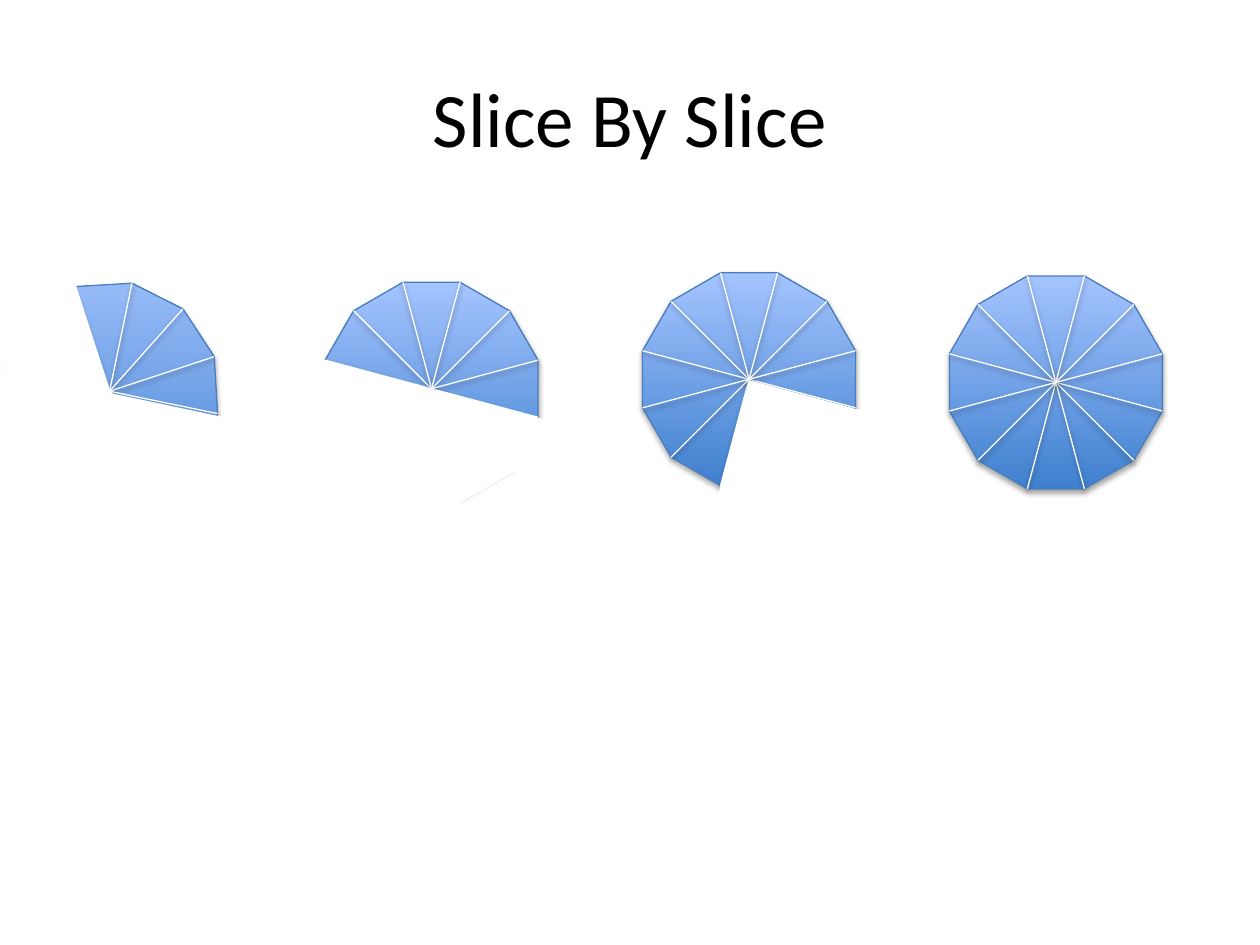
import math

import pptx
import pptx.dml.color
import pptx.enum.shapes
import pptx.enum.text
import pptx.oxml.ns
import pptx.util
from lxml import etree

COLORS = {
    "dark": "3F80CE",
    "light": "A4C4FF",
    "edge": "4B7EBC",
    "white": "FFFFFF",
    "black": "000000",
}
COLUMNS, ROWS = 100, 75
SHAPE = pptx.enum.shapes.MSO_SHAPE
SIZE = 16.9
SPOKES = 6


def color(name):
    return pptx.dml.color.RGBColor.from_string(COLORS[name])


class Page:
    font = "Calibri"
    line_width = pptx.util.Pt(0.75)

    def __init__(self, deck):
        self.slide = deck.slides.add_slide(deck.slide_layouts[5])
        self.column = deck.slide_width / COLUMNS
        self.row = deck.slide_height / ROWS

    def place(self, left, top, width, height):
        return (round(left * self.column), round(top * self.row),
                round(width * self.column), round(height * self.row))

    def title(self, text, *area):
        box = self.slide.shapes.title
        box.left, box.top, box.width, box.height = self.place(*area)
        box.text_frame.text = text
        box.text_frame.vertical_anchor = pptx.enum.text.MSO_ANCHOR.MIDDLE
        para = box.text_frame.paragraphs[0]
        para.alignment = pptx.enum.text.PP_ALIGN.CENTER
        para.font.name = self.font
        para.font.size = pptx.util.Pt(44)
        para.font.color.rgb = color("black")

    def outline(self, item, name):
        item.line.color.rgb = color(name)
        item.line.width = self.line_width

    def shadow(self, item, opacity, distance):
        qn = pptx.oxml.ns.qn
        properties = item._element.spPr
        effects = properties.find(qn("a:effectLst"))
        if effects is None:
            effects = etree.SubElement(properties, qn("a:effectLst"))
        outer = etree.SubElement(
            effects, qn("a:outerShdw"), blurRad=str(pptx.util.Pt(3.1)),
            dist=str(pptx.util.Pt(distance)), dir="5400000", rotWithShape="0")
        shade = etree.SubElement(outer, qn("a:srgbClr"), val=COLORS["black"])
        etree.SubElement(shade, qn("a:alpha"), val=str(opacity * 1000))

    def disc(self, group, center_x, center_y, turn):
        area = self.place(center_x - SIZE / 2, center_y - SIZE / 2, SIZE, SIZE)
        disc = group.shapes.add_shape(SHAPE.DODECAGON, *area)
        disc.rotation = turn
        disc.fill.gradient()
        disc.fill.gradient_angle = 90
        for stop, name in zip(disc.fill.gradient_stops, ("dark", "light")):
            stop.color.rgb = color(name)
        gradient = disc._element.spPr.find(pptx.oxml.ns.qn("a:gradFill"))
        gradient.set("rotWithShape", "0")
        self.outline(disc, "edge")
        disc.shadow.inherit = False
        self.shadow(disc, 35, 1.8)

    def spoke(self, group, center_x, center_y, degrees):
        radius = SIZE / 2 / math.cos(math.radians(15))
        across = radius * math.cos(math.radians(degrees))
        down = radius * math.sin(math.radians(degrees))
        start = self.place(center_x - across, center_y - down, 0, 0)[:2]
        end = self.place(center_x + across, center_y + down, 0, 0)[:2]
        line = group.shapes.add_connector(
            pptx.enum.shapes.MSO_CONNECTOR.STRAIGHT, *start, *end)
        self.outline(line, "white")
        self.shadow(line, 38, 1.6)

    def wheel(self, center_x, center_y, turn=0):
        group = self.slide.shapes.add_group_shape()
        self.disc(group, center_x, center_y, turn)
        for index in range(SPOKES):
            self.spoke(group, center_x, center_y, 15 + turn + 30 * index)
        return group

    def cover(self, group, kind, area, turn, flipped=False, outlined=False):
        cover = group.shapes.add_shape(kind, *self.place(*area))
        cover.rotation = turn
        cover.shadow.inherit = False
        cover.fill.solid()
        cover.fill.fore_color.rgb = color("white")
        if outlined:
            self.outline(cover, "white")
        else:
            cover.line.fill.background()
        if flipped:
            cover._element.spPr.xfrm.set("flipH", "1")


def main():
    deck = pptx.Presentation()
    deck.slide_width = pptx.util.Inches(10)
    deck.slide_height = pptx.util.Inches(7.5)
    page = Page(deck)
    page.title("Slice By Slice", 5, 3, 90, 12.5)

    page.wheel(83.8, 30.35)

    third = page.wheel(8.7, 31.05, turn=56.7)
    page.cover(third, SHAPE.RIGHT_TRIANGLE, (0.4, 13.5, 14.5, 28.3), 9.2)
    page.cover(third, SHAPE.RIGHT_TRIANGLE, (3.1, 17, 17.5, 29.7), 71.5, flipped=True)

    half = page.wheel(34.25, 30.85)
    page.cover(half, SHAPE.RIGHT_TRIANGLE, (24.6, 21.5, 18.5, 18.5), 330.2)

    most = page.wheel(59.45, 30.1)
    page.cover(most, SHAPE.RECTANGLE, (58.1, 31.3, 9.4, 9.4), 15.1, outlined=True)

    deck.save("out.pptx")


if __name__ == "__main__":
    main()
